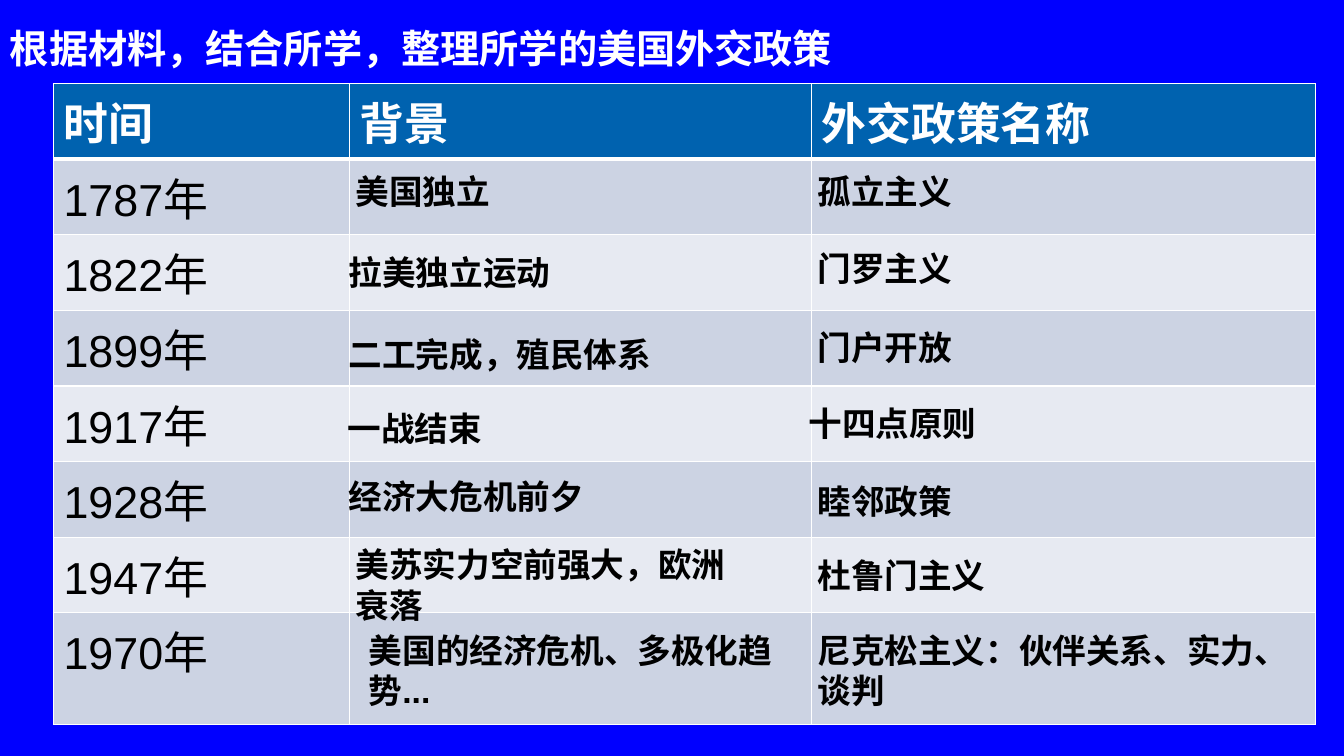
from dataclasses import dataclass

from lxml.etree import SubElement as Sub
from pptx import Presentation
from pptx.dml.color import RGBColor as Rgb
from pptx.enum.text import MSO_ANCHOR as Anchor
from pptx.oxml.ns import qn
from pptx.util import Inches, Pt


@dataclass(frozen=True)
class Theme:
    font: str = "Arial"
    back: str = "0000FF"
    head: str = "0062AF"
    dark: str = "CCD3E3"
    light: str = "E7EAF2"
    white: str = "FFFFFF"
    black: str = "000000"
    title: int = 28
    cell: int = 32
    note: int = 24


class Page:
    def __init__(self, deck, theme):
        self.theme = theme
        self.slide = deck.slides.add_slide(deck.slide_layouts[6])
        fill = self.slide.background.fill
        fill.solid()
        fill.fore_color.rgb = Rgb.from_string(theme.back)

    def add_run(self, frame, text, size, color, bold):
        run = frame.paragraphs[0].add_run()
        run.text = text
        font = run.font
        font.name = self.theme.font
        font.size = Pt(size)
        font.bold = bold
        font.color.rgb = Rgb.from_string(color)

    def label(self, box, text, size, color, anchor=Anchor.TOP):
        shape = self.slide.shapes.add_textbox(*map(Inches, box))
        frame = shape.text_frame
        frame.word_wrap = True
        frame.vertical_anchor = anchor
        self.add_run(frame, text, size, color, True)

    def edge(self, cell, side, width):
        line = Sub(cell._tc.get_or_add_tcPr(), qn(f"a:{side}"), w=str(Pt(width)))
        fill = Sub(line, qn("a:solidFill"))
        Sub(fill, qn("a:srgbClr"), val=self.theme.white)

    def paint(self, cell, row):
        theme = self.theme
        for side in ("lnL", "lnR", "lnT", "lnB"):
            thick = (row, side) in ((0, "lnB"), (1, "lnT"))
            self.edge(cell, side, 3 if thick else 1)
        cell.fill.solid()
        color = (theme.light, theme.dark)[row % 2] if row else theme.head
        cell.fill.fore_color.rgb = Rgb.from_string(color)

    def table(self, box, cols, rows, data):
        theme = self.theme
        grid = self.slide.shapes.add_table(
            len(rows), len(cols), *map(Inches, box)).table
        for col, width in zip(grid.columns, cols):
            col.width = Inches(width)
        for row, high in zip(grid.rows, rows):
            row.height = Inches(high)
        for r, line in enumerate(data):
            for c in range(len(cols)):
                cell = grid.cell(r, c)
                self.paint(cell, r)
                if c < len(line):
                    color = theme.black if r else theme.white
                    self.add_run(cell.text_frame, line[c], theme.cell, color, r == 0)


HEADS = ["时间", "背景", "外交政策名称"]
YEARS = [1787, 1822, 1899, 1917, 1928, 1947, 1970]
CAUSES = [
    (3.43, 1.65, 2.28, 0.5, "美国独立"),
    (3.36, 2.45, 2.28, 0.5, "拉美独立运动"),
    (3.36, 3.26, 3.83, 0.5, "二工完成，殖民体系"),
    (3.35, 4, 3.83, 0.5, "一战结束"),
    (3.36, 4.67, 3.83, 0.5, "经济大危机前夕"),
    (3.43, 5.35, 4.19, 0.67, "美苏实力空前强大，欧洲衰落"),
    (3.56, 6.2, 4.57, 0.82, "美国的经济危机、多极化趋势..."),
]
POLICIES = [
    (8.01, 1.65, 2.28, 0.5, "孤立主义"),
    (8.01, 2.41, 2.28, 0.5, "门罗主义"),
    (8.01, 3.19, 2.28, 0.5, "门户开放"),
    (7.92, 3.95, 2.28, 0.5, "十四点原则"),
    (8.01, 4.72, 2.28, 0.5, "睦邻政策"),
    (8.01, 5.46, 2.28, 0.5, "杜鲁门主义"),
    (8.01, 6.2, 4.93, 0.82, "尼克松主义：伙伴关系、实力、谈判"),
]


def main():
    deck = Presentation()
    deck.slide_width, deck.slide_height = Inches(13.33), Inches(7.5)
    theme = Theme()
    page = Page(deck, theme)
    page.table((0.53, 0.83, 12.52, 6.37), [2.94, 4.58, 5], [0.75] * 7 + [1.11],
               [HEADS] + [[f"{year}年"] for year in YEARS])
    page.label((0, 0, 11.88, 0.76), "根据材料，结合所学，整理所学的美国外交政策",
               theme.title, theme.white, Anchor.BOTTOM)
    for *box, text in CAUSES + POLICIES:
        page.label(box, text, theme.note, theme.black)
    deck.save("out.pptx")


if __name__ == "__main__":
    main()
